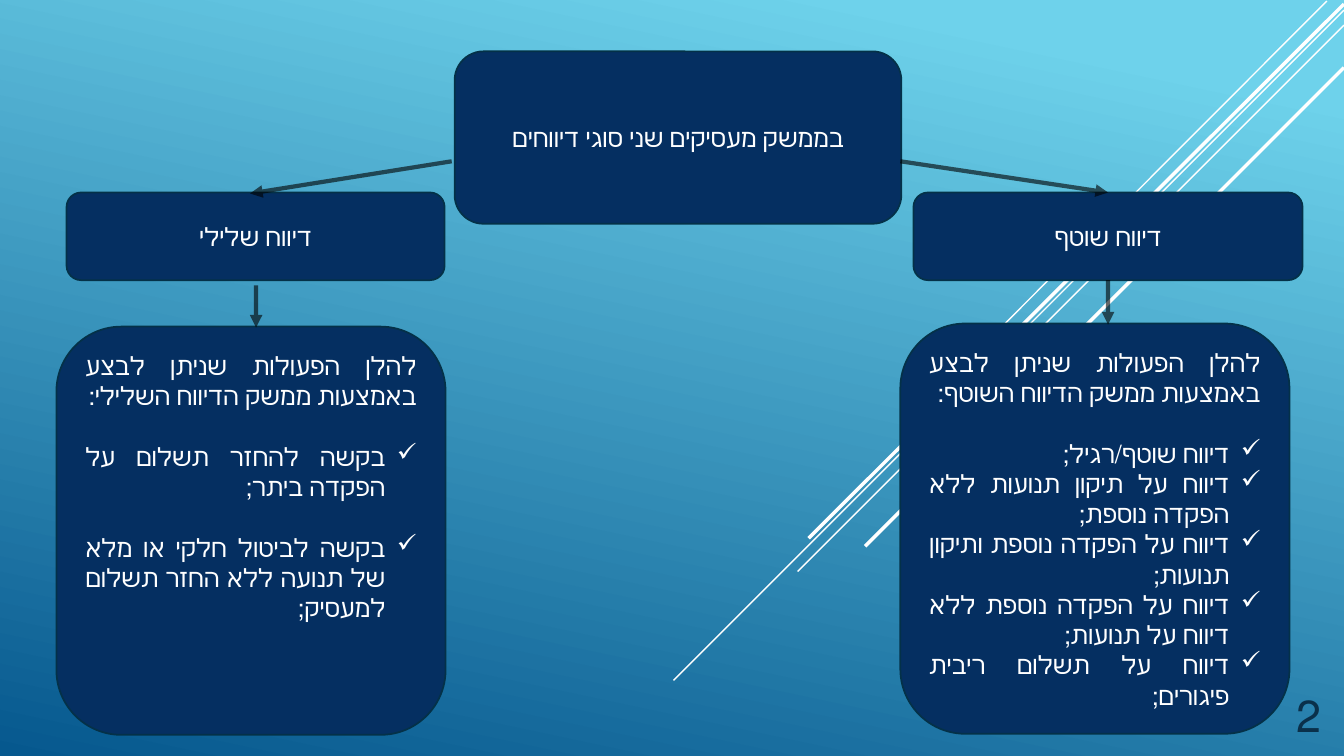
from lxml import etree
from pptx import Presentation, util as u
from pptx.dml import color
from pptx.enum import shapes as sh, text as tx
from pptx.oxml import ns

FONT = "TeX Gyre Adventor"
MID, TOP, LOW = tx.MSO_ANCHOR.MIDDLE, tx.MSO_ANCHOR.TOP, tx.MSO_ANCHOR.BOTTOM
CENTER, RIGHT, JUST = tx.PP_ALIGN.CENTER, tx.PP_ALIGN.RIGHT, tx.PP_ALIGN.JUSTIFY
rgb = color.RGBColor.from_string

prs = Presentation()
prs.slide_width, prs.slide_height = u.Inches(13.33), u.Inches(7.5)
slide = prs.slides.add_slide(prs.slide_layouts[6])


def write(shape, anchor, paras, size=18, tint="FFFFFF"):
    """Each paragraph: words, alignment, space before in points, ticked."""
    frame = shape.text_frame
    frame.word_wrap = True
    frame.vertical_anchor = anchor
    for i, (words, align, gap, tick) in enumerate(paras):
        para = frame.add_paragraph() if i else frame.paragraphs[0]
        para.alignment = align
        para.space_before = u.Pt(gap)
        props = para._p.get_or_add_pPr()
        props.set("rtl", "1")
        if tick:
            props.set("marL", str(u.Inches(0.31)))
            props.set("indent", str(u.Inches(-0.31)))
            etree.SubElement(props, ns.qn("a:buChar"), char="✓")
        run = para.add_run()
        run.text = words
        run.font.size = u.Pt(size)
        run.font.name = FONT
        run.font.color.rgb = rgb(tint)


def line(start, end, tint, width):
    link = slide.shapes.add_connector(
        sh.MSO_CONNECTOR.STRAIGHT, *map(u.Inches, start + end))
    link.line.color.rgb = rgb(tint)
    link.line.width = u.Pt(width)
    etree.SubElement(link._element.spPr, ns.qn("a:effectLst"))
    return link


# Background
fill = slide.background.fill
fill.gradient()
fill.gradient_angle = 258
for stop, (place, tint) in zip(fill.gradient_stops,
                               [(0.1, "6ED2EB"), (1, "06588E")]):
    stop.position = place
    stop.color.rgb = rgb(tint)

# Diagonal stripes
for start, end, width in [
    ((13.16, 0.01), (9, 4.18), 1),
    ((13.33, 0.1), (6.68, 6.75), 1),
    ((13.33, 0.25), (7.91, 5.67), 1),
    ((13.33, 0.04), (8.02, 5.34), 2.5),
    ((13.33, 0.67), (8.58, 5.42), 2.5),
]:
    line(start, end, "FFFFFF", width)

# Boxes
current = [
    ("להלן הפעולות שניתן לבצע באמצעות ממשק הדיווח השוטף:", JUST, 0, False),
    ("דיווח שוטף/רגיל;", JUST, 21.6, True),
    ("דיווח על תיקון תנועות ללא הפקדה נוספת;", JUST, 0, True),
    ("דיווח על הפקדה נוספת ותיקון תנועות;", JUST, 0, True),
    ("דיווח על הפקדה נוספת ללא דיווח על תנועות;", JUST, 0, True),
    ("דיווח על תשלום ריבית פיגורים;", JUST, 0, True),
]
negative = [
    ("להלן הפעולות שניתן לבצע באמצעות ממשק הדיווח השלילי:", JUST, 0, False),
    ("בקשה להחזר תשלום על הפקדה ביתר;", JUST, 21.6, True),
    ("בקשה לביטול חלקי או מלא של תנועה ללא החזר תשלום למעסיק;",
     JUST, 21.6, True),
]
boxes = []
for area, anchor, paras in [
    ((4.51, 0.51, 4.43, 1.71), MID,
     [("בממשק מעסיקים שני סוגי דיווחים", CENTER, 0, False)]),
    ((9.06, 1.91, 3.86, 0.87), MID, [("דיווח שוטף", CENTER, 0, False)]),
    ((8.93, 3.21, 3.86, 4.07), MID, current),
    ((0.66, 1.91, 3.75, 0.87), MID, [("דיווח שלילי", CENTER, 0, False)]),
    ((0.56, 3.24, 3.86, 4.05), TOP, negative),
]:
    box = slide.shapes.add_shape(
        sh.MSO_SHAPE.ROUNDED_RECTANGLE, *map(u.Inches, area))
    box.shadow.inherit = False
    box.fill.solid()
    box.fill.fore_color.rgb = rgb("052F61")
    box.line.color.rgb = rgb("043148")
    box.line.width = u.Pt(1.25)
    write(box, anchor, paras)
    boxes.append(box)

# Arrows, 60% opaque
arrows = []
for start, end in [
    ((8.93, 1.6), (10.99, 1.91)),
    ((4.48, 1.6), (2.48, 1.92)),
    ((10.99, 2.78), (10.99, 3.22)),
    ((2.54, 2.83), (2.54, 3.25)),
]:
    arrow = line(start, end, "000000", 3)
    stroke = arrow.line._get_or_add_ln()
    etree.SubElement(stroke.find(".//" + ns.qn("a:srgbClr")),
                     ns.qn("a:alpha"), val="60000")
    etree.SubElement(stroke, ns.qn("a:tailEnd"), type="triangle")
    arrows.append(arrow)
arrows[0].end_connect(boxes[1], 0)
arrows[2].begin_connect(boxes[1], 2)

# Slide number
number = slide.shapes.add_textbox(*map(u.Inches, (11.95, 6.68, 1.25, 0.73)))
write(number, LOW, [("2", RIGHT, 0, False)], 32, "0A304A")

prs.save("out.pptx")
